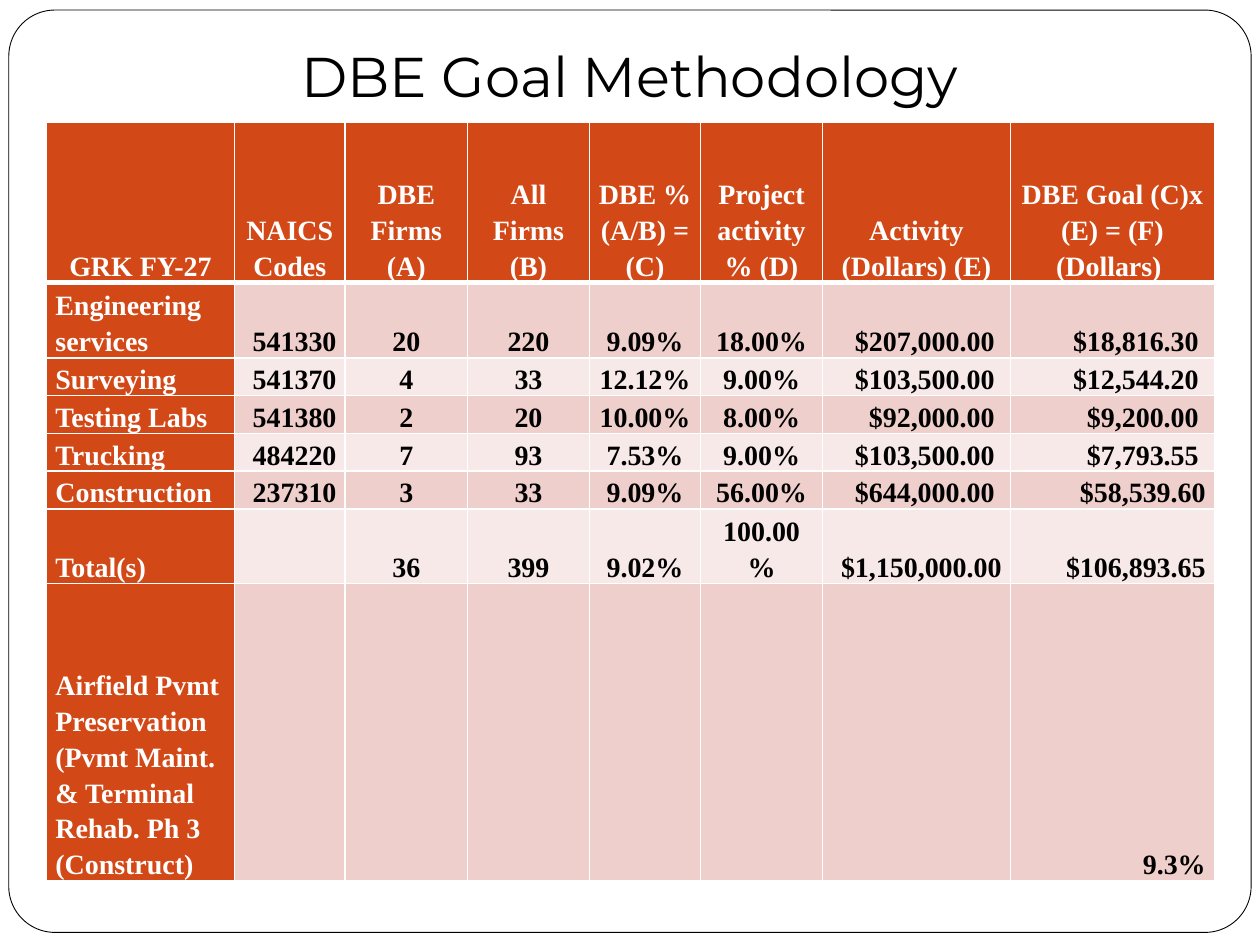
"""Build the DBE goal methodology slide."""
from lxml.etree import SubElement
from pptx import Presentation
from pptx.dml.color import RGBColor
from pptx.enum.shapes import MSO_SHAPE as Shape
from pptx.enum.text import MSO_ANCHOR as Anchor, PP_ALIGN as Align
from pptx.oxml.ns import qn
from pptx.util import Inches, Pt

TITLE = "DBE Goal Methodology"
HEAD = ["GRK FY-27", "NAICS Codes", "DBE Firms (A)", "All Firms (B)",
        "DBE % (A/B) = (C)", "Project activity % (D)",
        "Activity (Dollars) (E)", "DBE Goal (C)x (E) = (F) (Dollars) "]
BODY = [
    ["Engineering services", "541330", "20", "220", "9.09%", "18.00%", "$207,000.00 ", "$18,816.30 "],
    ["Surveying", "541370", "4", "33", "12.12%", "9.00%", "$103,500.00 ", "$12,544.20 "],
    ["Testing Labs", "541380", "2", "20", "10.00%", "8.00%", "$92,000.00 ", "$9,200.00 "],
    ["Trucking", "484220", "7", "93", "7.53%", "9.00%", "$103,500.00 ", "$7,793.55 "],
    ["Construction", "237310", "3", "33", "9.09%", "56.00%", "$644,000.00 ", "$58,539.60"],
    ["Total(s)", "", "36", "399", "9.02%", "100.00%", "$1,150,000.00", "$106,893.65"],
    ["Airfield Pvmt Preservation (Pvmt Maint. & Terminal Rehab. Ph 3 (Construct)",
     "", "", "", "", "", "", "9.3%"],
]
WIDTHS = [1.49, 0.88, 0.97, 0.97, 0.88, 0.97, 1.49, 1.62]
HEIGHTS = [1.27, 0.6, 0.3, 0.3, 0.3, 0.3, 0.59, 2.36]
ALIGNS = [Align.LEFT, Align.RIGHT] + [Align.CENTER] * 4 + [Align.RIGHT] * 2
WHITE, BLACK, RUST = "FFFFFF", "000000", "D34817"
BANDS = ["EFCFCC", "F7E9E8"]


def paint(fill, color):
    """Make a fill solid in the given colour."""
    fill.solid()
    fill.fore_color.rgb = RGBColor.from_string(color)


def style(para, font, size, color, align, bold=False):
    """Set the font and alignment of a paragraph."""
    para.alignment = align
    para.font.name, para.font.size, para.font.bold = font, Pt(size), bold
    paint(para.font.fill, color)


def edge(cell, row):
    """Draw white cell borders, thicker under the header."""
    props = cell._tc.get_or_add_tcPr()
    for spot, side in enumerate("LRTB"):
        thick = (row, side) in [(0, "B"), (1, "T")]
        line = SubElement(props, qn(f"a:ln{side}"), w=str(Pt(3 if thick else 1)))
        SubElement(SubElement(line, qn("a:solidFill")), qn("a:srgbClr"), val=WHITE)
        props.insert(spot, line)


def add_frame(slide):
    """Add the rounded outline behind everything."""
    frame = slide.shapes.add_shape(Shape.ROUNDED_RECTANGLE, Inches(0.07),
                                   Inches(0.08), Inches(9.86), Inches(7.32))
    frame.adjustments[0] = 0.05
    frame.shadow.inherit = False
    paint(frame.fill, WHITE)
    paint(frame.line.fill, BLACK)
    frame.line.width = Pt(0.5)
    slide.shapes._spTree.insert(2, frame._element)


def add_title(slide):
    """Place and format the title."""
    title = slide.shapes.title
    title.left, title.top = Inches(1), Inches(0.28)
    title.width, title.height = Inches(8), Inches(0.64)
    box = title.text_frame
    box.text = TITLE
    box.vertical_anchor = Anchor.MIDDLE
    style(box.paragraphs[0], "Montserrat", 32, BLACK, Align.CENTER)


def add_goals(slide):
    """Add the table of goals."""
    rows = [HEAD] + BODY
    table = slide.shapes.add_table(
        len(rows), len(HEAD), Inches(0.37), Inches(0.97),
        Inches(sum(WIDTHS)), Inches(sum(HEIGHTS))).table
    table.first_col = True
    for col, width in zip(table.columns, WIDTHS):
        col.width = Inches(width)
    for row, height in zip(table.rows, HEIGHTS):
        row.height = Inches(height)
    for r, texts in enumerate(rows):
        for c, text in enumerate(texts):
            cell = table.cell(r, c)
            label = r == 0 or c == 0
            cell.text = text
            cell.vertical_anchor = Anchor.BOTTOM
            cell.margin_left = cell.margin_right = Inches(0.07)
            cell.margin_top = cell.margin_bottom = 0
            paint(cell.fill, RUST if label else BANDS[(r - 1) % 2])
            edge(cell, r)
            para = cell.text_frame.paragraphs[0]
            para.line_spacing = 1.15
            style(para, "Times New Roman", 16, WHITE if label else BLACK,
                  Align.CENTER if r == 0 else ALIGNS[c], True)


def main():
    """Build and save the slide."""
    deck = Presentation()
    deck.slide_width, deck.slide_height = Inches(10), Inches(7.5)
    slide = deck.slides.add_slide(deck.slide_layouts[5])
    add_frame(slide)
    add_title(slide)
    add_goals(slide)
    deck.save("out.pptx")


if __name__ == "__main__":
    main()
